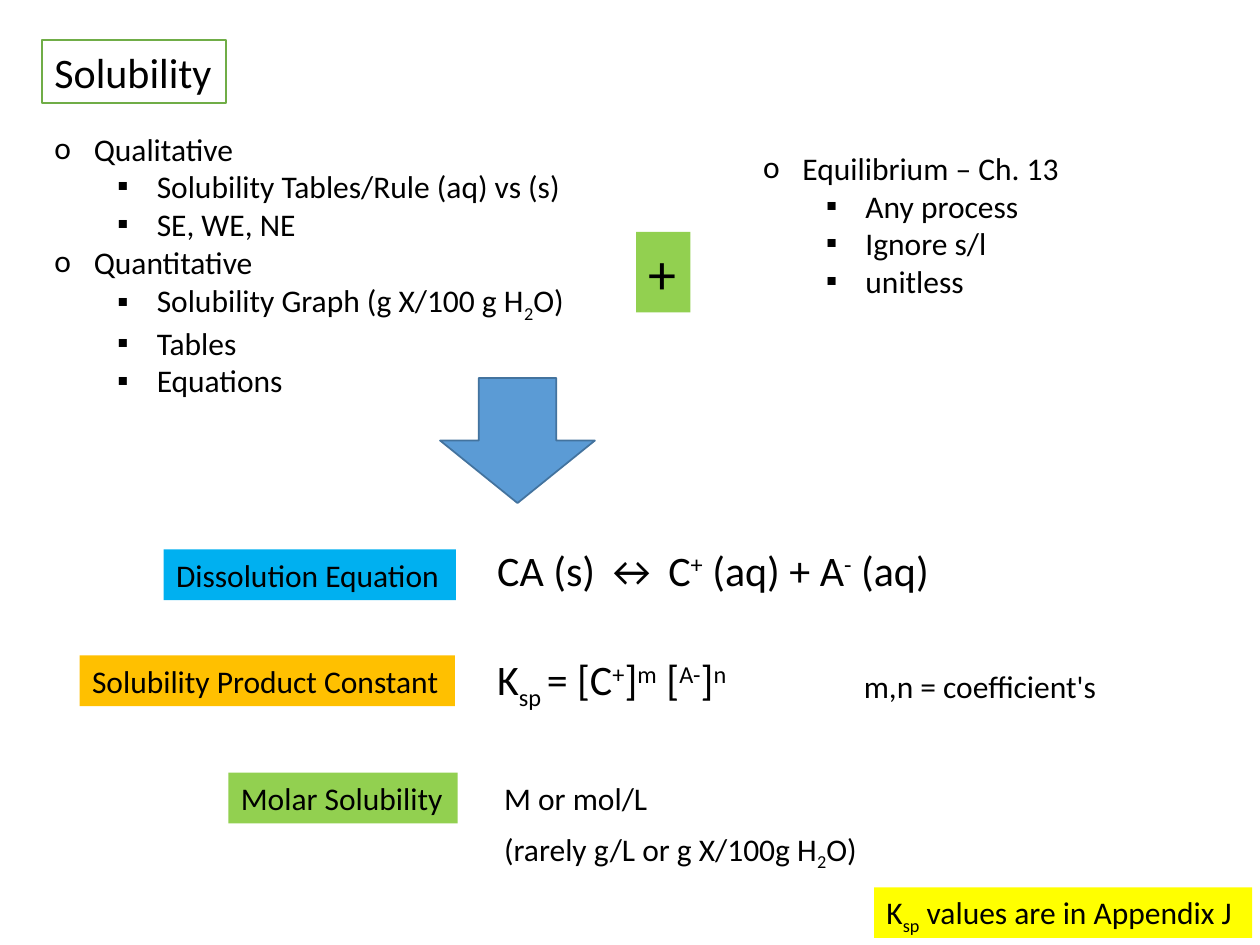
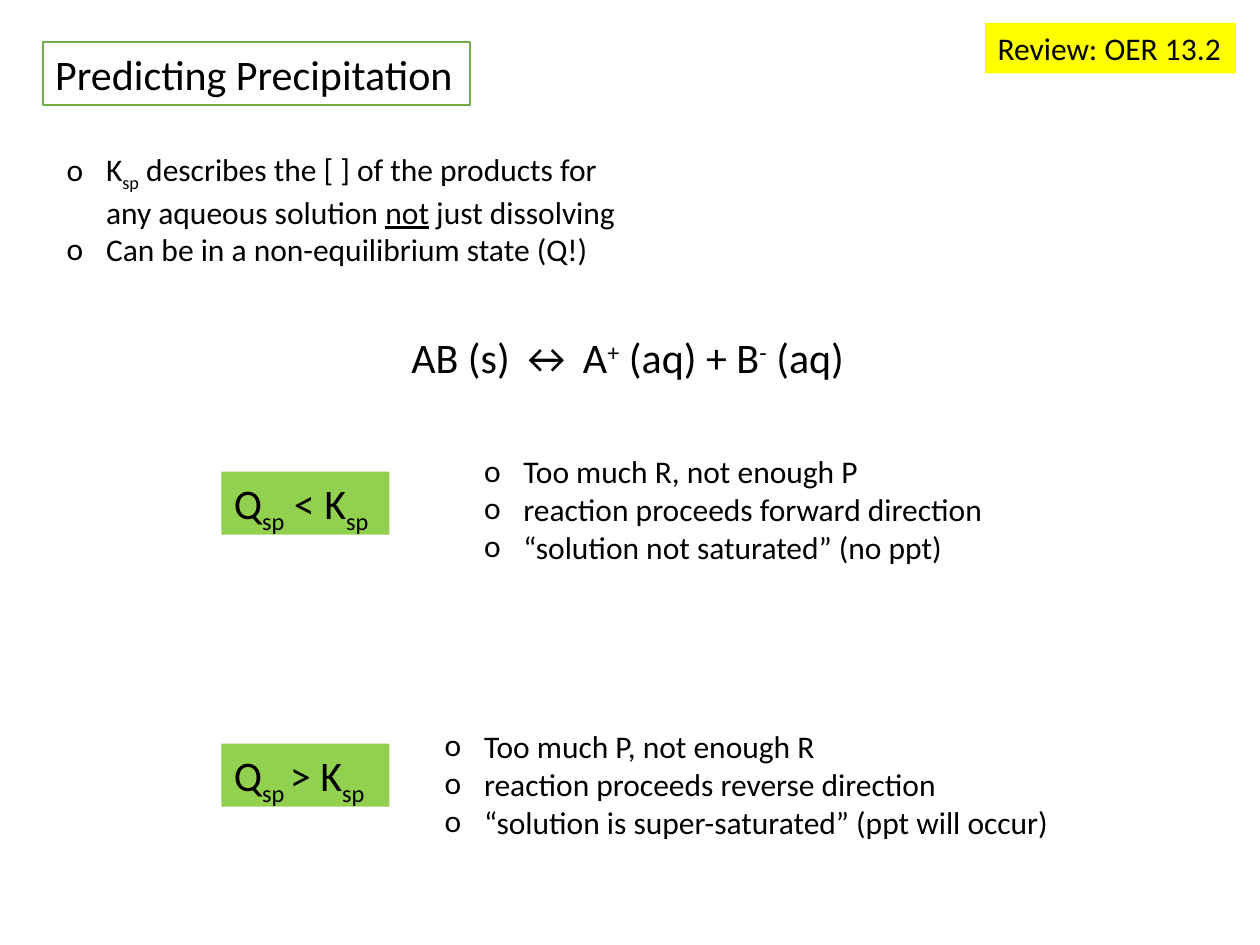
import pptx
import pptx.util
import pptx.dml.color
import pptx.enum.shapes
import pptx.enum.text
import pptx.oxml.ns
import lxml.etree

Pt = pptx.util.Pt
RGB = pptx.dml.color.RGBColor
KIND = pptx.enum.shapes.MSO_SHAPE

BLACK = RGB(0x00, 0x00, 0x00)
WHITE = RGB(0xFF, 0xFF, 0xFF)
GREEN = RGB(0x70, 0xAD, 0x47)
LIME = RGB(0x92, 0xD0, 0x50)
GOLD = RGB(0xFF, 0xC0, 0x00)
CYAN = RGB(0x00, 0xB0, 0xF0)
YELLOW = RGB(0xFF, 0xFF, 0x00)
BLUE = RGB(0x5B, 0x9B, 0xD5)
NAVY = RGB(0x43, 0x73, 0x9E)

FONT = "Calibri"
SMALL, LARGE, HUGE = 18, 24, 32
HIGH = {SMALL: 29, LARGE: 36, HUGE: 46}
LINE, PAD = 21.6, 7.2
MARKS = ("o", "▪")
HANG, STEP = 22.5, 36
BASE = {"_": "-25000", "^": "30000"}

# TEXT_MARKS
SLIDES = [
    {
        "title": ("Solubility", 24, 23, 105),
        "lists": [
            (24, 70.5, 309.5, [
                ("Qualitative", ["Solubility Tables/Rule (aq) vs (s)", "SE, WE, NE"]),
                ("Quantitative", ["Solubility Graph (g X/100 g H|_2|O)", "Tables", "Equations"]),
            ]),
            (429, 81.5, 186, [
                ("Equilibrium – Ch. 13", ["Any process", "Ignore s/l", "unitless"]),
            ]),
        ],
        "labels": [
            ("+", 363.5, 132.5, 31, HUGE, LIME),
            ("Dissolution Equation", 93.5, 314, 167, SMALL, CYAN),
            ("Solubility Product Constant", 45.5, 374.5, 214.5, SMALL, GOLD),
            ("Molar Solubility", 130.5, 441.5, 131, SMALL, LIME),
            ("K|_sp| values are in Appendix J", 499.5, 507, 216, SMALL, YELLOW),
        ],
        "notes": [
            ("CA (s) ↔ C|^+| (aq) + A|^-| (aq)", 277, 307.5, 265, LARGE),
            ("K|_sp |= [C|^+|]|^m| [|^A-|]|^n", 277, 370, 155, LARGE),
            ("m,n = coefficient's", 486.5, 377.5, 150.5, SMALL),
            ("M or mol/L", 281, 441.5, 97, SMALL),
            ("(rarely g/L or g X/100g H|_2|O)", 281, 470.5, 219.5, SMALL),
        ],
        "arrow": (251.5, 216, 88.5, 71.5),
    },
    {
        "title": ("Predicting Precipitation", 24.5, 24, 244),
        "lists": [
            (31, 82, 343.5, [
                ("K|_sp| describes the [ ] of the products for any aqueous solution "
                 "|~not| just dissolving", []),
                ("Can be in a non-equilibrium state (Q!)", []),
            ]),
            (269.5, 255, 306, [
                ("Too much R, not enough P", []),
                ("reaction proceeds forward direction", []),
                ("“solution not saturated” (no ppt)", []),
            ]),
            (247, 412, 364.5, [
                ("Too much P, not enough R", []),
                ("reaction proceeds reverse direction", []),
                ("“solution is super-saturated” (ppt will occur)", []),
            ]),
        ],
        "labels": [
            ("Q|_sp| < K|_sp", 126.5, 269.5, 96, LARGE, LIME),
            ("Q|_sp |> K|_sp", 126.5, 425, 96, LARGE, LIME),
            ("Review: OER 13.2", 563, 13, 143.5, SMALL, YELLOW),
        ],
        "notes": [
            ("AB (s) ↔ A|^+| (aq) + B|^-| (aq)", 228, 186, 265, LARGE),
        ],
    },
]


def write(para, text, size):
    for part in text.split("|"):
        mark = part[:1]
        styled = mark in ("_", "^", "~")
        run = para.add_run()
        run.text = part[1:] if styled else part
        run.font.name = FONT
        run.font.size = Pt(size)
        run.font.color.rgb = BLACK
        if mark == "~":
            run.font.underline = True
        elif styled:
            run.font._element.set("baseline", BASE[mark])


def bullet(para, level):
    para.level = level
    props = para._p.get_or_add_pPr()
    props.set("marL", str(Pt(HANG + STEP * level)))
    props.set("indent", str(Pt(-HANG)))
    name = pptx.oxml.ns.qn
    lxml.etree.SubElement(props, name("a:buFont")).set("typeface", FONT)
    lxml.etree.SubElement(props, name("a:buChar")).set("char", MARKS[level])


def paint(shape, fill, edge=None):
    shape.shadow.inherit = False
    shape.fill.solid()
    shape.fill.fore_color.rgb = fill
    if edge is None:
        shape.line.fill.background()
    else:
        shape.line.color.rgb = edge
        shape.line.width = Pt(1)


def place(slide, x, y, wide, high, fill=None, edge=None):
    spot = [Pt(n) for n in (x, y, wide, high)]
    if fill is None:
        shape = slide.shapes.add_textbox(*spot)
    else:
        shape = slide.shapes.add_shape(KIND.RECTANGLE, *spot)
        paint(shape, fill, edge)
    frame = shape.text_frame
    frame.word_wrap = False
    frame.auto_size = pptx.enum.text.MSO_AUTO_SIZE.SHAPE_TO_FIT_TEXT
    frame.vertical_anchor = pptx.enum.text.MSO_ANCHOR.TOP
    frame.paragraphs[0].alignment = pptx.enum.text.PP_ALIGN.LEFT
    return frame


def add_line(slide, text, x, y, wide, size, fill=None, edge=None):
    frame = place(slide, x, y, wide, HIGH[size], fill, edge)
    write(frame.paragraphs[0], text, size)


def add_list(slide, x, y, wide, items):
    rows = []
    for head, subs in items:
        rows.append((0, head))
        rows.extend((1, sub) for sub in subs)
    frame = place(slide, x, y, wide, max(len(rows), 3) * LINE + PAD)
    frame.word_wrap = any("|~" in text for _, text in rows)
    for i, (level, text) in enumerate(rows):
        para = frame.add_paragraph() if i else frame.paragraphs[0]
        bullet(para, level)
        write(para, text, SMALL)


def build(deck, data):
    slide = deck.slides.add_slide(deck.slide_layouts[6])
    add_line(slide, *data["title"], LARGE, WHITE, GREEN)
    for block in data["lists"]:
        add_list(slide, *block)
    for item in data["labels"] + data["notes"]:
        add_line(slide, *item)
    if "arrow" in data:
        spot = [Pt(n) for n in data["arrow"]]
        paint(slide.shapes.add_shape(KIND.DOWN_ARROW, *spot), BLUE, NAVY)


def main():
    deck = pptx.Presentation()
    deck.slide_width, deck.slide_height = Pt(720), Pt(540)
    for data in SLIDES:
        build(deck, data)
    deck.save("out.pptx")


if __name__ == "__main__":
    main()
